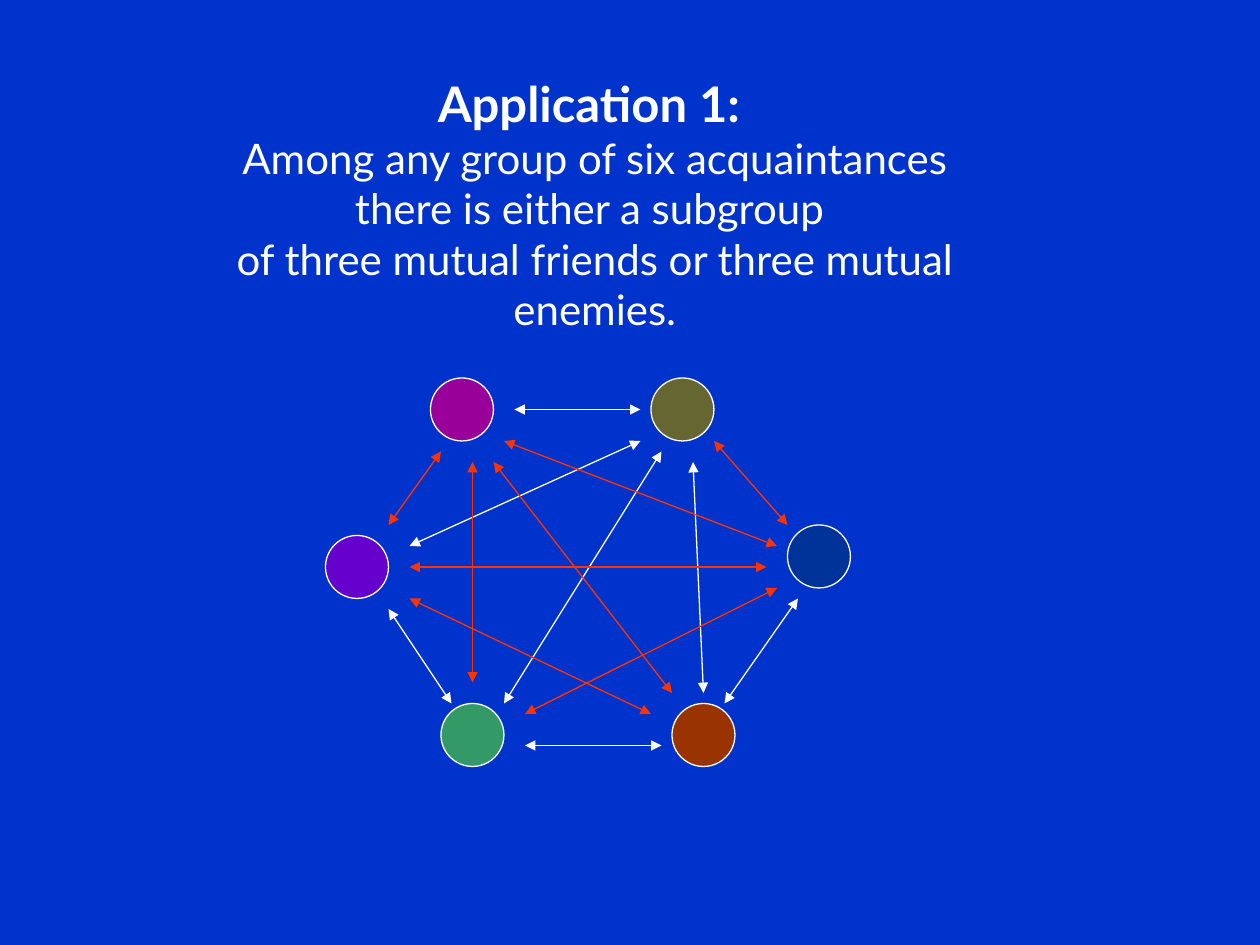
import dataclasses

import lxml.etree
import pptx
import pptx.dml.color
import pptx.enum.shapes
import pptx.enum.text
import pptx.oxml.ns
import pptx.util

PX = 7620  # EMU per px, 120 px to the inch


@dataclasses.dataclass
class Theme:
    font: str = "Lato"
    back: str = "0033CC"
    white: str = "FFFFFF"
    red: str = "FF3300"
    head: int = 28
    body: int = 24
    line: float = 0.75


theme = Theme()


def rgb(code):
    return pptx.dml.color.RGBColor.from_string(code)


def add_arrow(slide, ends, color):
    """Draw a line with an arrowhead at both ends."""
    line = slide.shapes.add_connector(
        pptx.enum.shapes.MSO_CONNECTOR.STRAIGHT, *[n * PX for n in ends])
    line.line.color.rgb = rgb(color)
    line.line.width = pptx.util.Pt(theme.line)
    stroke = line.line._get_or_add_ln()
    for tag in ("a:headEnd", "a:tailEnd"):
        lxml.etree.SubElement(stroke, pptx.oxml.ns.qn(tag), type="triangle")
    lxml.etree.SubElement(
        line._element.spPr, pptx.oxml.ns.qn("a:effectLst"))


deck = pptx.Presentation()
deck.slide_width = 1200 * PX
deck.slide_height = 900 * PX
slide = deck.slides.add_slide(deck.slide_layouts.get_by_name("Title Only"))
slide.background.fill.solid()
slide.background.fill.fore_color.rgb = rgb(theme.back)

# Title
title = slide.shapes.title
title.left, title.top, title.width, title.height = [
    n * PX for n in (150, 64, 833, 212)]
frame = title.text_frame
frame.word_wrap = True
frame.auto_size = pptx.enum.text.MSO_AUTO_SIZE.NONE
frame.vertical_anchor = pptx.enum.text.MSO_ANCHOR.TOP
words = [
    ("Application 1: ", theme.head, True),
    ("Among any group of six acquaintances", theme.body, False),
    ("there is either a subgroup ", theme.body, False),
    ("of three mutual friends or three mutual enemies.", theme.body, False),
]
for i, (text, size, bold) in enumerate(words):
    para = frame.add_paragraph() if i else frame.paragraphs[0]
    para.alignment = pptx.enum.text.PP_ALIGN.CENTER
    run = para.add_run()
    run.text = text
    run.font.name = theme.font
    run.font.size = pptx.util.Pt(size)
    run.font.bold = bold
    run.font.color.rgb = rgb(theme.white)

# Six people
SIZE = 60
people = [
    (640, 670, "993300"),
    (420, 670, "339966"),
    (310, 510, "6600CC"),
    (410, 360, "990099"),
    (750, 500, "003399"),
    (620, 360, "666633"),
]
for left, top, color in people:
    dot = slide.shapes.add_shape(
        pptx.enum.shapes.MSO_SHAPE.OVAL,
        left * PX, top * PX, SIZE * PX, SIZE * PX)
    dot.shadow.inherit = False
    dot.fill.solid()
    dot.fill.fore_color.rgb = rgb(color)
    dot.line.color.rgb = rgb(theme.white)
    dot.line.width = pptx.util.Pt(theme.line)

# Every pair is joined in one of two colors
bonds = {
    theme.white: [
        (480, 670, 630, 430),
        (490, 390, 610, 390),
        (370, 580, 430, 670),
        (500, 710, 630, 710),
        (690, 670, 760, 570),
        (660, 440, 670, 660),
        (390, 520, 610, 420),
    ],
    theme.red: [
        (480, 420, 740, 520),
        (420, 430, 370, 500),
        (450, 440, 450, 650),
        (470, 440, 640, 660),
        (680, 420, 750, 500),
        (390, 540, 730, 540),
        (500, 680, 740, 560),
        (390, 570, 620, 680),
    ],
}
for color, group in bonds.items():
    for ends in group:
        add_arrow(slide, ends, color)

deck.save("out.pptx")
